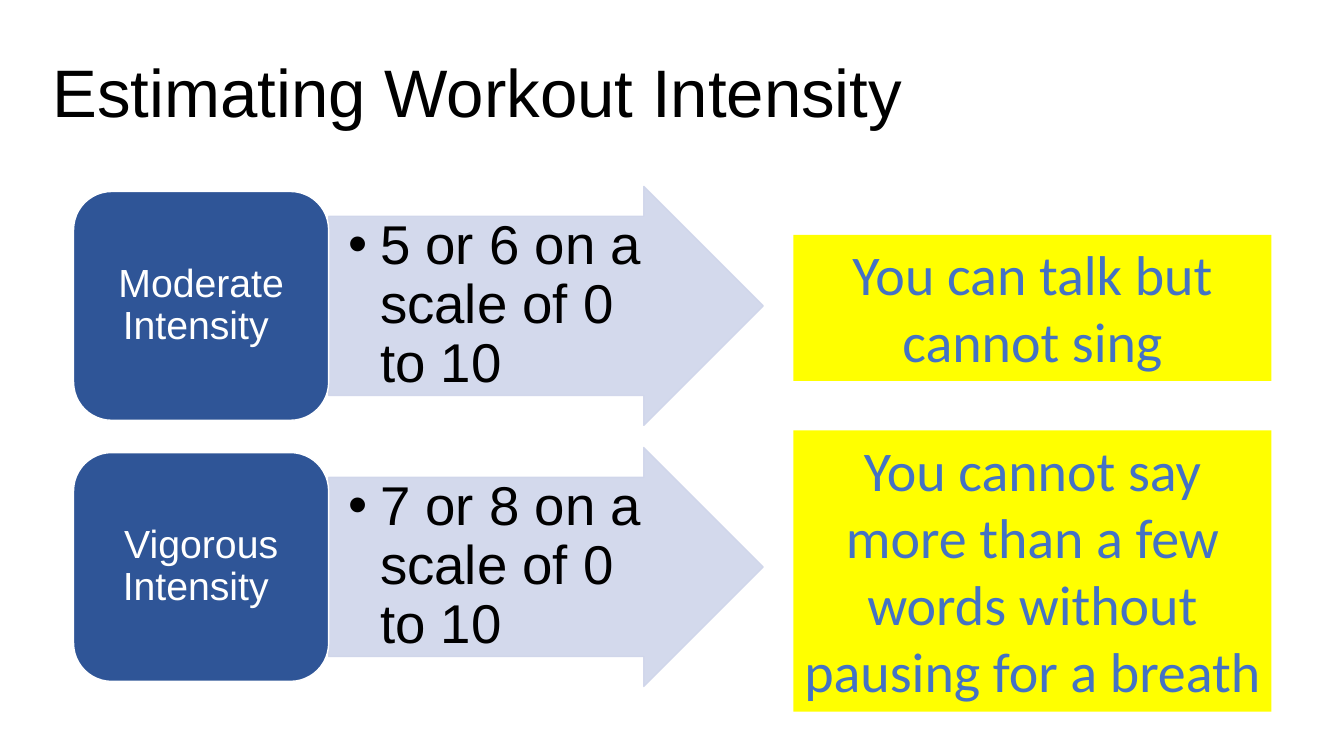
from lxml import etree
from pptx import Presentation
from pptx import util as u
from pptx.dml.color import RGBColor
from pptx.enum import shapes, text
from pptx.oxml.ns import qn

WIDTH, HEIGHT = 13.33, 7.5
ROW_TOP, ROW_PITCH, ROW_HEIGHT = 1.85, 2.59, 2.37
LABEL_LEFT, LABEL_WIDTH, ARROW_WIDTH = 0.73, 2.53, 4.31
LABEL_MARGIN, LABEL_INSET = 0.05, 0.11
NOTE_LEFT, NOTE_WIDTH = 7.87, 4.74

TITLE = {"size": 48, "color": "000000", "margins": (0, 0, 0, 0),
         "anchor": text.MSO_ANCHOR.TOP}
SCALE = {"size": 39, "color": "000000", "margins": (0.2, 0.03, 0.03, 0.03)}
LABEL = {"size": 28, "color": "FFFFFF", "margins": (0.12, 0.06, 0.12, 0.06),
         "align": text.PP_ALIGN.CENTER}
NOTE = {"size": 40, "color": "4472C4", "font": "Calibri", "spacing": 1.0,
        "align": text.PP_ALIGN.CENTER, "anchor": text.MSO_ANCHOR.TOP}

# label, scale, talk test, top and height of the talk test
LEVELS = [
    ("Moderate Intensity ", "5 or 6 on a scale of 0 to 10",
     "You can talk but cannot sing", 2.33, 1.45),
    ("Vigorous Intensity ", "7 or 8 on a scale of 0 to 10",
     "You cannot say more than a few words without pausing for a breath",
     4.27, 2.79),
]


def color(hex_string):
    return RGBColor.from_string(hex_string)


def inches(box):
    return [u.Inches(length) for length in box]


def write(shape, words, style):
    frame = shape.text_frame
    margins = inches(style.get("margins", (0.1, 0.05, 0.1, 0.05)))
    sides = ("margin_left", "margin_top", "margin_right", "margin_bottom")
    settings = dict(zip(sides, margins), word_wrap=True,
                    vertical_anchor=style.get("anchor", text.MSO_ANCHOR.MIDDLE))
    for name, value in settings.items():
        setattr(frame, name, value)
    paragraph = frame.paragraphs[0]
    paragraph.alignment = style.get("align", text.PP_ALIGN.LEFT)
    paragraph.line_spacing = style.get("spacing", 0.9)
    run = paragraph.add_run()
    run.text = words
    run.font.name = style.get("font", "Arial")
    run.font.size = u.Pt(style["size"])
    run.font.color.rgb = color(style["color"])
    return paragraph


def add_text(slide, box, words, style):
    return write(slide.shapes.add_textbox(*inches(box)), words, style)


def add_filled(slide, kind, box, fill, line=None, opacity=None):
    shape = slide.shapes.add_shape(kind, *inches(box))
    shape.shadow.inherit = False
    shape.fill.solid()
    shape.fill.fore_color.rgb = color(fill)
    if line:
        shape.line.color.rgb = color(line)
        shape.line.width = u.Pt(1)
    else:
        shape.line.fill.background()
    if opacity:
        for node in shape._element.spPr.iter(qn("a:srgbClr")):
            etree.SubElement(node, qn("a:alpha"), val=str(opacity * 1000))
    return shape


def add_bullet(paragraph, indent):
    properties = paragraph._p.get_or_add_pPr()
    properties.set("marL", str(u.Inches(indent)))
    properties.set("indent", str(u.Inches(-indent)))
    etree.SubElement(properties, qn("a:buFont"), typeface="Arial")
    etree.SubElement(properties, qn("a:buChar"), char="•")


def add_scale_arrow(slide, box, words):
    left, top, width, height = box
    arrow = add_filled(slide, shapes.MSO_SHAPE.RIGHT_ARROW, box,
                       "CFD5EA", "CFD5EA", opacity=90)
    arrow.adjustments[0], arrow.adjustments[1] = 0.75, 0.5
    # The text reaches a quarter of the way into the arrowhead's height
    text_box = (left, top + height / 8, width - height * 3 / 8, height * 0.75)
    add_bullet(add_text(slide, text_box, words, SCALE), 0.31)


def add_label(slide, box, words):
    left, top, width, height = box
    add_filled(slide, shapes.MSO_SHAPE.ROUNDED_RECTANGLE, box, "2F5597", "FFFFFF")
    inner = (left + LABEL_INSET, top + LABEL_INSET,
             width - 2 * LABEL_INSET, height - 2 * LABEL_INSET)
    add_text(slide, inner, words, LABEL)


def add_level(slide, box, label, scale):
    left, top, width, height = box
    add_scale_arrow(slide, (left + LABEL_WIDTH, top, width - LABEL_WIDTH, height),
                    scale)
    add_label(slide, (left, top + LABEL_MARGIN, LABEL_WIDTH,
                      height - 2 * LABEL_MARGIN), label)


def add_talk_test(slide, box, words):
    note = add_filled(slide, shapes.MSO_SHAPE.RECTANGLE, box, "FFFF00")
    write(note, words, NOTE)


def main():
    presentation = Presentation()
    presentation.slide_width, presentation.slide_height = inches((WIDTH, HEIGHT))
    slide = presentation.slides.add_slide(presentation.slide_layouts[6])
    add_text(slide, (0.52, 0.59, 12.3, 0.86), "Estimating Workout Intensity", TITLE)
    for row, (label, scale, talk_test, top, height) in enumerate(LEVELS):
        add_level(slide, (LABEL_LEFT, ROW_TOP + row * ROW_PITCH,
                          LABEL_WIDTH + ARROW_WIDTH, ROW_HEIGHT), label, scale)
        add_talk_test(slide, (NOTE_LEFT, top, NOTE_WIDTH, height), talk_test)
    presentation.save("out.pptx")


if __name__ == "__main__":
    main()
